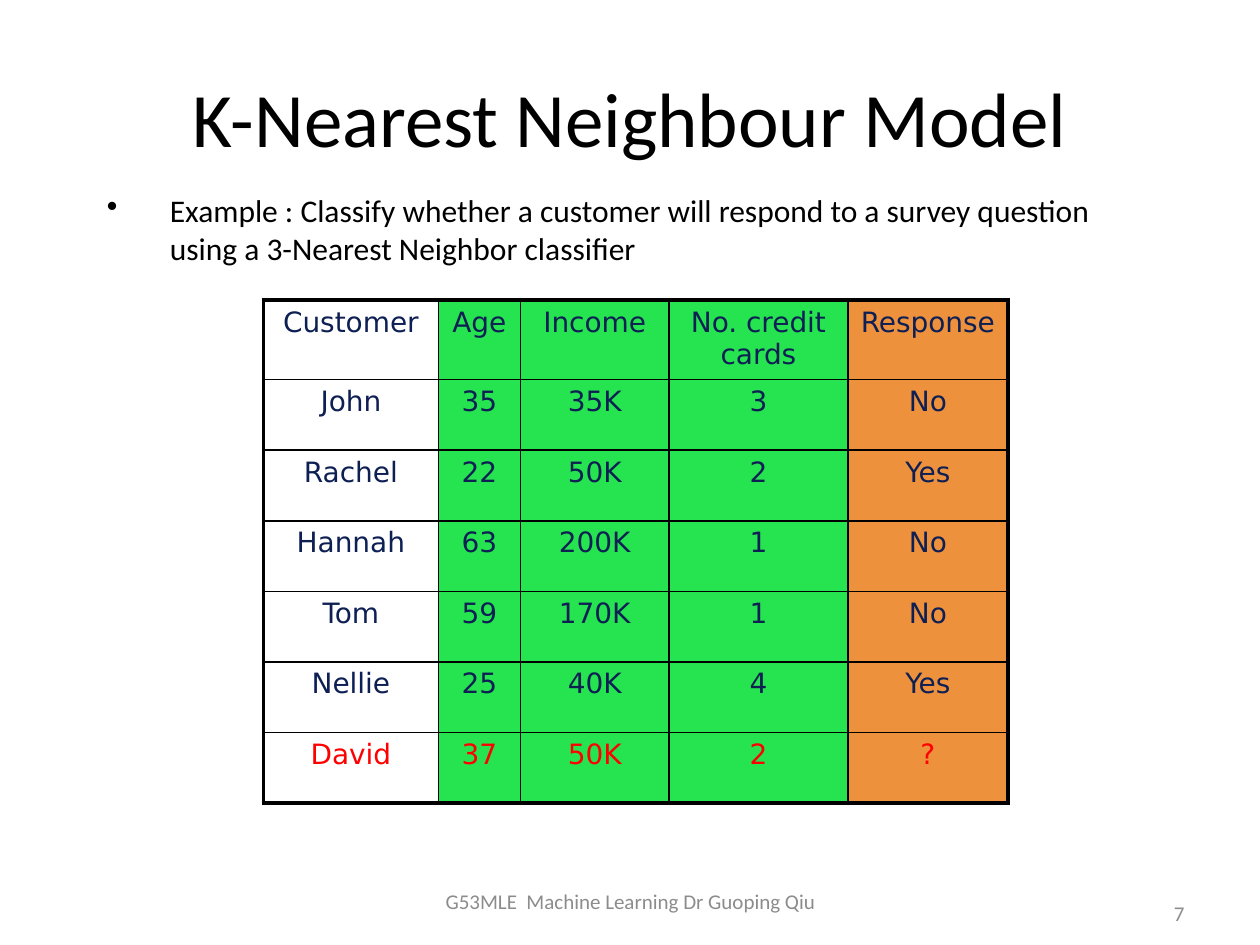
from lxml.etree import SubElement as Sub
from pptx import Presentation
from pptx.dml.color import RGBColor
from pptx.enum.text import MSO_ANCHOR as Anchor, PP_ALIGN as Align
from pptx.oxml.ns import qn
from pptx.util import Inches, Pt

BLACK = RGBColor(0x00, 0x00, 0x00)
GREY = RGBColor(0x8C, 0x8C, 0x8C)
NAVY = RGBColor(0x0E, 0x1F, 0x54)
RED = RGBColor(0xFF, 0x00, 0x00)
GREEN = RGBColor(0x26, 0xE4, 0x4F)
ORANGE = RGBColor(0xEE, 0x91, 0x3C)

deck = Presentation()
deck.slide_width, deck.slide_height = Inches(10), Inches(7.5)
slide = deck.slides.add_slide(deck.slide_layouts[6])


def add_text(text, box, size, color, align, anchor=Anchor.MIDDLE):
    frame = slide.shapes.add_textbox(*map(Inches, box)).text_frame
    frame.word_wrap = True
    frame.vertical_anchor = anchor
    para = frame.paragraphs[0]
    para.text = text
    para.alignment = align
    para.font.size, para.font.name = Pt(size), "Calibri"
    para.font.color.rgb = color
    return frame


def add_edge(cell, side, width):
    line = Sub(cell._tc.get_or_add_tcPr(), qn(f"a:ln{side}"), w=str(Pt(width)))
    Sub(Sub(line, qn("a:solidFill")), qn("a:srgbClr"), val=str(BLACK))


# Title
add_text("K-Nearest Neighbour Model", (0.5, 0.3, 9, 1.25), 44, BLACK, Align.CENTER)

# Bulleted example
body = add_text(
    "Example : Classify whether a customer will respond to a survey question "
    "using a 3-Nearest Neighbor classifier",
    (0.75, 1.47, 8.5, 5.09), 18, BLACK, Align.LEFT, Anchor.TOP)
props = body.paragraphs[0]._p.get_or_add_pPr()
props.set("marL", str(Inches(0.5)))
props.set("indent", str(Inches(-0.5)))
bullet = props.makeelement(qn("a:buChar"), {"char": "•"})
props.insert(0, bullet)

# Footer and slide number
add_text("G53MLE  Machine Learning Dr Guoping Qiu", (3.42, 6.95, 3.17, 0.4),
         12, GREY, Align.CENTER)
number = add_text("7", (7.17, 6.95, 2.33, 0.4), 12, GREY, Align.RIGHT, Anchor.BOTTOM)
number.margin_bottom = 0

# Customer table
ROWS = [
    ("Customer", "Age", "Income", "No. credit cards", "Response"),
    ("John", "35", "35K", "3", "No"),
    ("Rachel", "22", "50K", "2", "Yes"),
    ("Hannah", "63", "200K", "1", "No"),
    ("Tom", "59", "170K", "1", "No"),
    ("Nellie", "25", "40K", "4", "Yes"),
    ("David", "37", "50K", "2", "?"),
]
WIDTHS = (1.39, 0.65, 1.18, 1.42, 1.27)
FILLS = (None, GREEN, GREEN, GREEN, ORANGE)
HEAD, STEP = 0.62, 0.56
THIN, THICK = 1, 2.25
last_row, last_col = len(ROWS) - 1, len(WIDTHS) - 1

table = slide.shapes.add_table(
    len(ROWS), len(WIDTHS), Inches(2.09), Inches(2.38),
    Inches(sum(WIDTHS)), Inches(HEAD + STEP * last_row)).table
table.first_row = table.horz_banding = False
for col, width in zip(table.columns, WIDTHS):
    col.width = Inches(width)

for r, row in enumerate(ROWS):
    table.rows[r].height = Inches(STEP if r else HEAD)
    for c, text in enumerate(row):
        cell = table.cell(r, c)
        # Thick frame outside, thin grid inside
        outer = {"L": c == 0, "R": c == last_col, "T": r == 0, "B": r == last_row}
        for side, thick in outer.items():
            add_edge(cell, side, THICK if thick else THIN)
        if FILLS[c]:
            cell.fill.solid()
            cell.fill.fore_color.rgb = FILLS[c]
        else:
            cell.fill.background()
        para = cell.text_frame.paragraphs[0]
        para.text = text
        para.alignment = Align.CENTER
        para.font.size, para.font.name = Pt(16), "DejaVu Sans"
        para.font.color.rgb = RED if r == last_row else NAVY

deck.save("out.pptx")
